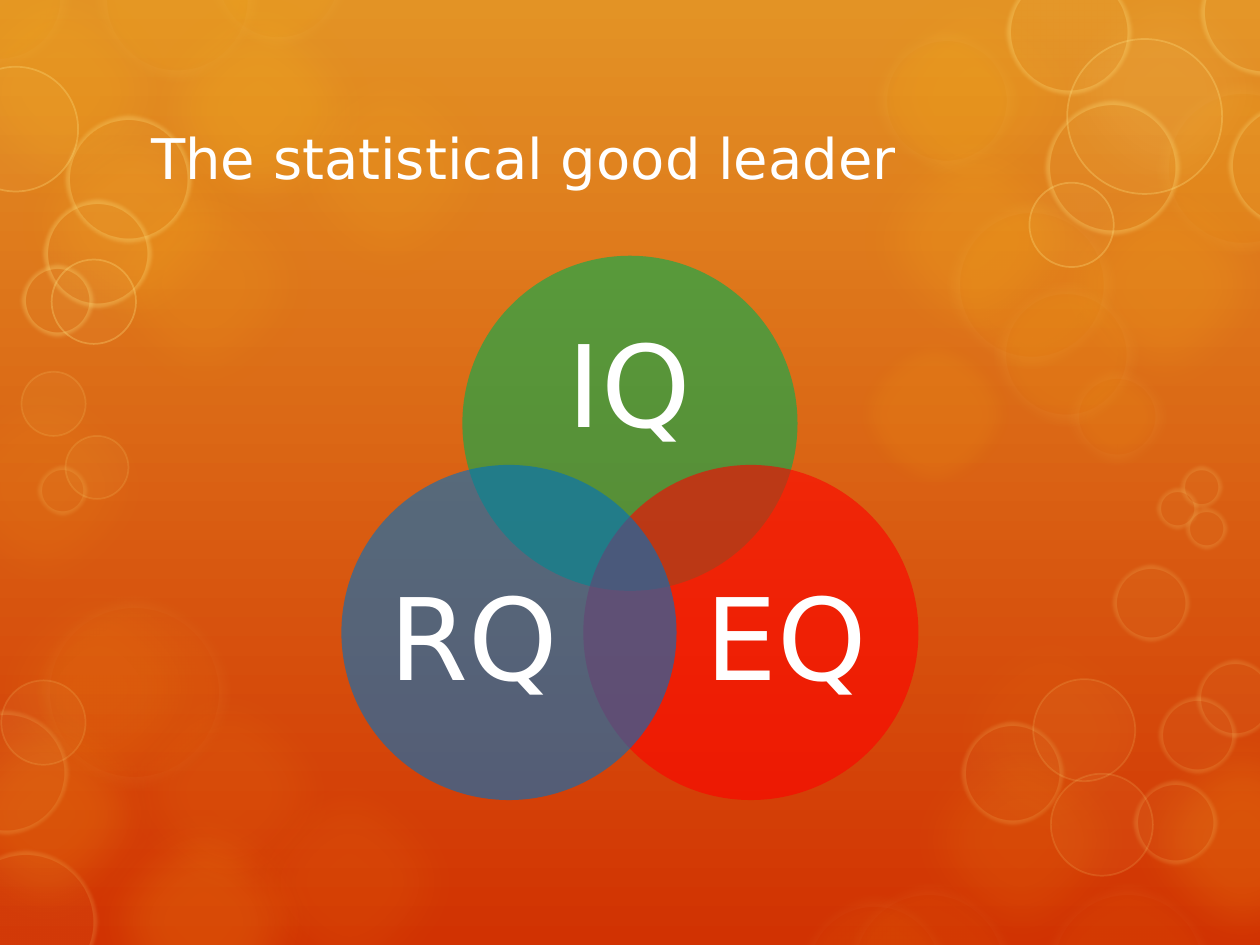
from dataclasses import dataclass

from lxml import etree
from pptx import Presentation
from pptx import util as u
from pptx.dml.color import RGBColor
from pptx.enum import shapes, text
from pptx.oxml.ns import qn

COLORS = {
    "sky": "E39325", "ground": "D13202",
    "amber": "FDC61B", "cream": "FFE281", "pale": "FEEBAE",
    "green": "00B050", "red": "FF0000", "blue": "0070C0", "white": "FFFFFF",
}
FONT = "DejaVu Sans"


@dataclass(frozen=True)
class BubbleStyle:
    fill: str
    opacity: int
    line_width: float = 0
    line_color: str = "cream"
    line_opacity: int = 0
    soft_edge: float = 0  # points


@dataclass(frozen=True)
class VennCircle:
    label: str
    color: str
    left: float
    top: float
    text_box: tuple[float, float, float, float]


def glow(opacity: int, fill: str = "amber", soft_edge: float = 25) -> BubbleStyle:
    return BubbleStyle(fill, opacity, soft_edge=soft_edge)


HAZE = BubbleStyle("amber", 10, 14, "pale", 6, 10)
FAINT_HAZE = BubbleStyle("amber", 6, 14, "pale", 4, 10)
RING = BubbleStyle("cream", 5, 1, "cream", 30)
FAINT_RING = BubbleStyle("cream", 5, 1, "cream", 15)
SOFT_RING = BubbleStyle("cream", 5, 5, "cream", 30, 2.5)
FAINT_SOFT_RING = BubbleStyle("cream", 5, 5, "cream", 15, 2.5)

# Style, then (left, top, diameter) of each bubble, from back to front
BUBBLES = [
    (glow(8), [(-0.26, 4.42, 2.09)]),
    (glow(10), [(0.57, 1.2, 2.09), (2.05, 0.31, 2.09)]),
    (glow(16), [(0.57, 6.27, 2.09)]),
    (glow(14), [(-0.56, -0.32, 2.09)]),
    (glow(20), [(1.01, -0.18, 2.09)]),
    (glow(15), [(0, 0.72, 2.09)]),
    (glow(10, "cream"), [(8.2, -0.32, 2.09)]),
    (glow(10), [(6.69, -0.29, 2.09)]),
    (glow(15), [(8.2, 1.2, 2.09)]),
    (glow(16), [(8.81, 5.62, 2.09)]),
    (glow(5), [(7.29, 4.77, 2.09)]),
    (glow(16), [(-0.68, 5.41, 2.09)]),
    (glow(8), [(0.77, 5.24, 2.09)]),
    (glow(15), [(6.69, 0.86, 2.09)]),
    (glow(10), [(7.06, 5.62, 2.09)]),
    (HAZE, [(9.18, 0.65, 1.37), (6.94, 0.23, 1.14), (7.52, 1.59, 1.33),
            (7.89, 2.24, 1.14), (8.47, 2.91, 0.79), (0.75, -0.66, 1.31),
            (1.64, -0.75, 1.14), (-0.57, -0.58, 1.14)]),
    (FAINT_HAZE, [(0.3, 4.73, 1.53), (6.32, 7.1, 1.24), (6.69, 7.01, 1.37),
                  (8.27, 7.01, 1.37)]),
    (FAINT_RING, [(0.01, 5.4, 0.67)]),
    (FAINT_SOFT_RING, [(-0.36, 6.75, 1.13), (-0.44, 5.64, 0.98)]),
    (RING, [(-0.37, 0.53, 0.99)]),
    (SOFT_RING, [(0.52, 0.92, 1), (0.35, 1.59, 0.85)]),
    (RING, [(0.41, 2.06, 0.67)]),
    (SOFT_RING, [(0.17, 2.1, 0.57), (7.99, -0.24, 0.99), (9.53, -0.4, 1)]),
    (RING, [(8.47, 0.31, 1.23)]),
    (SOFT_RING, [(9.75, 0.82, 0.99), (8.3, 0.8, 1.06)]),
    (RING, [(8.17, 1.45, 0.67)]),
    (FAINT_RING, [(8.34, 6.14, 0.81)]),
    (FAINT_SOFT_RING, [(7.63, 5.73, 0.81)]),
    (FAINT_RING, [(8.2, 5.39, 0.81)]),
    (FAINT_SOFT_RING, [(9, 6.2, 0.66), (8.83, 4.48, 0.61), (9.2, 5.53, 0.61),
                       (9.5, 5.24, 0.61)]),
    (glow(8), [(1.73, 5.96, 2.09)]),
    (FAINT_SOFT_RING, [(9.37, 3.7, 0.33), (9.18, 3.87, 0.33), (9.41, 4.03, 0.33)]),
    (FAINT_RING, [(0.17, 2.95, 0.51), (0.52, 3.46, 0.5)]),
    (FAINT_SOFT_RING, [(0.3, 3.7, 0.39)]),
    (glow(8), [(-0.7, 2.82, 2.09)]),
    (glow(10, soft_edge=10), [(6.75, 2.62, 1.33)]),
]

VENN_DIAMETER = 2.66
VENN = [
    VennCircle("IQ", "green", 3.67, 2.03, (4.02, 2.5, 1.95, 1.2)),
    VennCircle("EQ", "red", 4.63, 3.69, (5.44, 4.38, 1.6, 1.46)),
    VennCircle("RQ", "blue", 2.71, 3.69, (2.96, 4.38, 1.6, 1.46)),
]


def rgb(name: str) -> RGBColor:
    return RGBColor.from_string(COLORS[name])


def paint(fill, color: str, opacity: int, element) -> None:
    """Fill solidly; element is the XML node that holds the solid fill."""
    fill.solid()
    fill.fore_color.rgb = rgb(color)
    color_node = element.find(qn("a:solidFill")).find(qn("a:srgbClr"))
    etree.SubElement(color_node, qn("a:alpha"), val=str(opacity * 1000))


def add_circle(parent, left: float, top: float, diameter: float,
               style: BubbleStyle) -> None:
    shape = parent.add_shape(shapes.MSO_SHAPE.OVAL, u.Inches(left), u.Inches(top),
                             u.Inches(diameter), u.Inches(diameter))
    properties = shape._element.spPr
    paint(shape.fill, style.fill, style.opacity, properties)
    if style.line_width:
        shape.line.width = u.Pt(style.line_width)
        paint(shape.line.fill, style.line_color, style.line_opacity,
              properties.find(qn("a:ln")))
    else:
        shape.line.fill.background()
    shape.shadow.inherit = False
    if style.soft_edge:
        etree.SubElement(properties.find(qn("a:effectLst")), qn("a:softEdge"),
                         rad=str(u.Pt(style.soft_edge)))


def format_text(frame, size: float, alignment) -> None:
    frame.word_wrap = True
    frame.vertical_anchor = text.MSO_ANCHOR.MIDDLE
    paragraph = frame.paragraphs[0]
    paragraph.alignment = alignment
    font = paragraph.runs[0].font
    font.size, font.name = u.Pt(size), FONT
    font.color.rgb = rgb("white")


def add_venn_circle(parent, circle: VennCircle) -> None:
    add_circle(parent, circle.left, circle.top, VENN_DIAMETER,
               BubbleStyle(circle.color, 60))
    frame = parent.add_textbox(*map(u.Inches, circle.text_box)).text_frame
    frame.margin_left = frame.margin_right = 0
    frame.margin_top = frame.margin_bottom = 0
    frame.text = circle.label
    format_text(frame, 65, text.PP_ALIGN.CENTER)
    frame.paragraphs[0].line_spacing = 0.9


def main() -> None:
    presentation = Presentation()
    presentation.slide_width, presentation.slide_height = u.Inches(10), u.Inches(7.5)
    slide = presentation.slides.add_slide(presentation.slide_layouts[5])

    # Background gradient, top to bottom
    background = slide.background.fill
    background.gradient()
    background.gradient_angle = 270
    for stop, color, position in zip(background.gradient_stops, ("sky", "ground"), (0, 1)):
        stop.color.rgb = rgb(color)
        stop.position = position

    # Bubbles
    for style, circles in BUBBLES:
        for circle in circles:
            add_circle(slide.shapes, *circle, style)

    # Title, brought in front of the bubbles
    title = slide.shapes.title
    title.left, title.top, title.width, title.height = map(
        u.Inches, (1.1, 0.74, 7.79, 1.01))
    title.text_frame.text = "The statistical good leader"
    format_text(title.text_frame, 32, text.PP_ALIGN.LEFT)
    slide.shapes._spTree.append(title._element)

    # Venn diagram
    group = slide.shapes.add_group_shape()
    for circle in VENN:
        add_venn_circle(group.shapes, circle)

    presentation.save("out.pptx")


if __name__ == "__main__":
    main()
